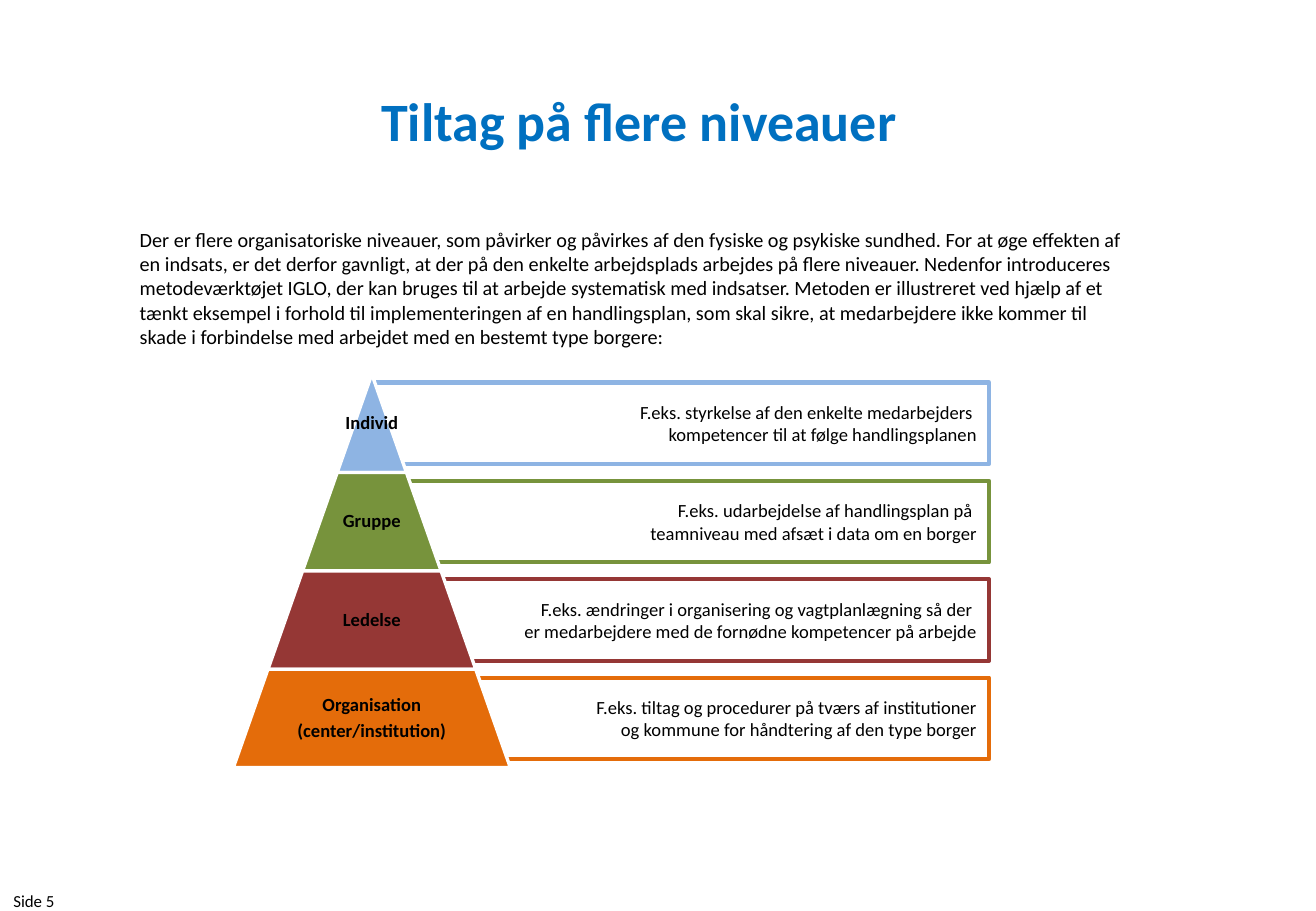
from pptx import Presentation
from pptx import util as u
from pptx.dml.color import RGBColor
from pptx.enum import text

COLORS = {"title": "0070C0", "ink": "000000", "paper": "FFFFFF", "Individ": "8EB4E3",
          "Gruppe": "77933C", "Ledelse": "953735", "Organisation": "E46C0A"}
LEVELS = [
    (["Individ"], ["F.eks. styrkelse af den enkelte medarbejders ",
                   "kompetencer til at følge handlingsplanen"]),
    (["Gruppe"], ["F.eks. udarbejdelse af handlingsplan på ",
                  "teamniveau med afsæt i data om en borger"]),
    (["Ledelse"], ["F.eks. ændringer i organisering og vagtplanlægning så der ",
                   "er medarbejdere med de fornødne kompetencer på arbejde"]),
    (["Organisation", "(center/institution)"],
     ["F.eks. tiltag og procedurer på tværs af institutioner",
      "og kommune for håndtering af den type borger"]),
]
INTRO = ("Der er flere organisatoriske niveauer, som påvirker og påvirkes af den fysiske og psykiske "
         "sundhed. For at øge effekten af en indsats, er det derfor gavnligt, at der på den enkelte "
         "arbejdsplads arbejdes på flere niveauer. Nedenfor introduceres metodeværktøjet IGLO, der kan "
         "bruges til at arbejde systematisk med indsatser. Metoden er illustreret ved hjælp af et tænkt "
         "eksempel i forhold til implementeringen af en handlingsplan, som skal sikre, at medarbejdere "
         "ikke kommer til skade i forbindelse med arbejdet med en bestemt type borgere:")
ALIGN = text.PP_ALIGN
ANCHOR = text.MSO_ANCHOR
APEX_X, APEX_Y = 3.06, 3.08
ROW, HALF_STEP = 0.81, 0.285
BAR_LEFT, BAR_RIGHT, BAR_TOP, BAR_HEIGHT = 3.06, 8.14, 3.15, 0.67


def write(shape, lines, margins, anchor, color, font, layout):
    frame = shape.text_frame
    side, edge = (u.Inches(margin) for margin in margins)
    settings = {"word_wrap": True, "vertical_anchor": anchor, "margin_left": side,
                "margin_right": side, "margin_top": edge, "margin_bottom": edge}
    for name, value in settings.items():
        setattr(frame, name, value)
    for index, line in enumerate(lines):
        para = frame.paragraphs[0] if index == 0 else frame.add_paragraph()
        for name, value in layout.items():
            setattr(para, name, value)
        span = para.add_run()
        span.text = line
        span.font.color.rgb = RGBColor.from_string(COLORS[color])
        for name, value in {"name": "Calibri", **font}.items():
            setattr(span.font, name, value)


def paint(shape, fill, line, width):
    shape.shadow.inherit = False
    shape.fill.solid()
    shape.fill.fore_color.rgb = RGBColor.from_string(COLORS[fill])
    shape.line.color.rgb = RGBColor.from_string(COLORS[line])
    shape.line.width = u.Pt(width)


deck = Presentation()
deck.slide_width, deck.slide_height = u.Inches(10.83), u.Inches(7.5)
page = deck.slides.add_slide(deck.slide_layouts[6])

for place, words, color, size, bold, align in [
    ((1.04, 0.66, 8.44, 0.66), "Tiltag på flere niveauer", "title", 32, True, ALIGN.CENTER),
    ((1.04, 1.81, 8.44, 1.14), INTRO, "ink", 12, False, ALIGN.LEFT),
    ((0, 7.27, 0.71, 0.28), "Side 5", "ink", 10, False, ALIGN.LEFT),
]:
    box = page.shapes.add_textbox(*map(u.Inches, place))
    write(box, [words], (0.11, 0.06), ANCHOR.TOP, color,
          {"size": u.Pt(size), "bold": bold}, {"alignment": align})

for row, (names, example) in enumerate(LEVELS):
    bar = page.shapes.add_shape(1, u.Inches(BAR_LEFT), u.Inches(BAR_TOP + row * ROW),
                                u.Inches(BAR_RIGHT - BAR_LEFT), u.Inches(BAR_HEIGHT))
    paint(bar, "paper", names[0], 2.5)
    write(bar, example, (0.1, 0.05), ANCHOR.MIDDLE, "ink",
          {"size": u.Pt(11)}, {"alignment": ALIGN.RIGHT})

for row, (names, example) in enumerate(LEVELS):
    top, bottom = APEX_Y + row * ROW, APEX_Y + (row + 1) * ROW
    upper, lower = row * HALF_STEP, (row + 1) * HALF_STEP
    outline = page.shapes.build_freeform(u.Inches(APEX_X - lower), u.Inches(bottom))
    corners = [(APEX_X - upper, top), (APEX_X + upper, top), (APEX_X + lower, bottom)]
    outline.add_line_segments([(u.Inches(x), u.Inches(y)) for x, y in corners], close=True)
    band = outline.convert_to_shape()
    paint(band, names[0], "paper", 2)
    write(band, names, (0.02, 0.02), ANCHOR.MIDDLE, "ink", {"size": u.Pt(11), "bold": True},
          {"alignment": ALIGN.CENTER, "line_spacing": 0.9, "space_after": u.Pt(3.85)})

deck.save("out.pptx")
